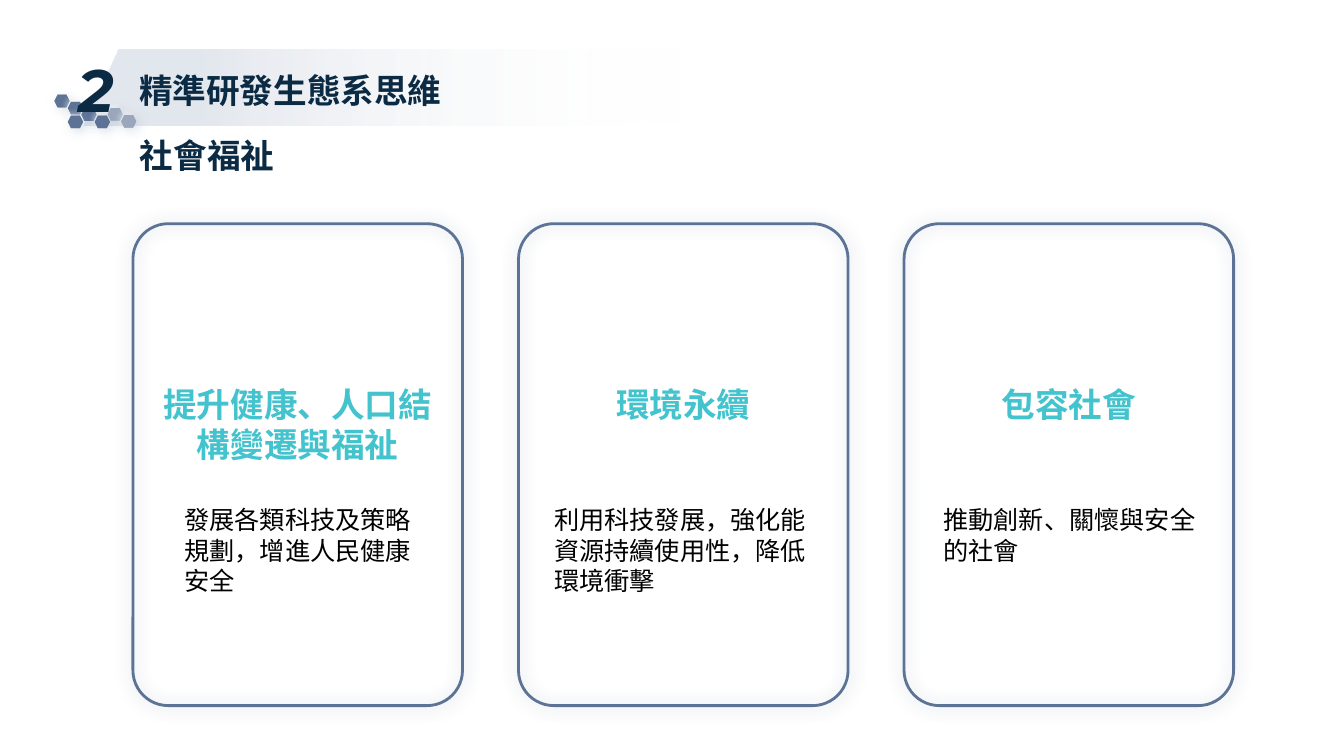
"""Build the social well-being slide: a numbered heading band and three goal cards."""
from lxml import etree
from pptx import Presentation
from pptx.dml.color import RGBColor
from pptx.enum.shapes import MSO_SHAPE
from pptx.enum.text import MSO_ANCHOR, MSO_AUTO_SIZE, PP_ALIGN
from pptx.oxml.ns import qn
from pptx.util import Pt

HEXAGON, ROUNDED = MSO_SHAPE.HEXAGON, MSO_SHAPE.ROUNDED_RECTANGLE
LEFT, CENTER = PP_ALIGN.LEFT, PP_ALIGN.CENTER
TOP, MIDDLE = MSO_ANCHOR.TOP, MSO_ANCHOR.MIDDLE
NO_AUTOFIT = MSO_AUTO_SIZE.NONE
CJK = "Noto Sans CJK SC"
COLORS = {"navy": "0B2A43", "slate": "5C7396", "mist": "99A6BB", "haze": "A2B1C6",
          "teal": "42C3CD", "black": "000000", "white": "FFFFFF"}


def write(shape, text, size, color, bold=False, align=LEFT, anchor=TOP, font=CJK):
    """Fill a shape with one formatted paragraph and return it."""
    frame = shape.text_frame
    frame.word_wrap, frame.auto_size, frame.vertical_anchor = True, NO_AUTOFIT, anchor
    frame.text = text
    paragraph = frame.paragraphs[0]
    paragraph.alignment = align
    paragraph.font.name, paragraph.font.size, paragraph.font.bold = font, Pt(size), bold
    paragraph.font.color.rgb = RGBColor.from_string(COLORS[color])
    latin = paragraph.font._element.find(qn("a:latin"))
    latin.addnext(latin.makeelement(qn("a:ea"), {"typeface": font}))
    return paragraph


def cast_shadow(shape, color, alpha, blur, distance=0, angle=0):
    """Give a shape one soft outer shadow."""
    shape.shadow.inherit = False
    effects = shape._element.spPr.find(qn("a:effectLst"))
    shadow = etree.SubElement(effects, qn("a:outerShdw"), blurRad=str(Pt(blur)),
                              dist=str(Pt(distance)), dir=str(angle * 60000),
                              algn="ctr", rotWithShape="0")
    tint = etree.SubElement(shadow, qn("a:srgbClr"), val=COLORS[color])
    etree.SubElement(tint, qn("a:alpha"), val=str(alpha * 1000))


deck = Presentation()
deck.slide_width, deck.slide_height = Pt(960), Pt(540)
slide = deck.slides.add_slide(deck.slide_layouts[5])
shapes = slide.shapes

outline = shapes.build_freeform(Pt(59.8), Pt(90), scale=1)
outline.add_line_segments([(Pt(85), Pt(35.6)), (Pt(751.4), Pt(35.6)), (Pt(751.4), Pt(90))])
band = outline.convert_to_shape()
band.shadow.inherit = False
band.line.fill.background()
band.fill.gradient()
band.fill.gradient_angle = 180
for stop, (position, color, alpha) in zip(band.fill.gradient_stops,
                                          [(0.38, "white", 0), (0.88, "haze", 30)]):
    stop.position = position
    stop.color.rgb = RGBColor.from_string(COLORS[color])
tints = band._element.spPr.findall(".//" + qn("a:srgbClr"))
for tint, alpha in zip(tints, (0, 30)):
    etree.SubElement(tint, qn("a:alpha"), val=str(alpha * 1000))

HONEYCOMB = [(38.9, 67.7, "slate"), (48.5, 72.7, "slate"), (58.1, 77.4, "slate"),
             (76.9, 77.2, "mist"), (86.5, 82.2, "mist"), (48.5, 82.6, "slate"),
             (67.7, 82.6, "slate")]
for x, y, color in HONEYCOMB:
    for glow, angle in (("haze", 45), ("white", 225)):
        cell = shapes.add_shape(HEXAGON, Pt(x), Pt(y), Pt(10.8), Pt(9))
        cell.fill.solid()
        cell.fill.fore_color.rgb = RGBColor.from_string(COLORS[color])
        cell.line.fill.background()
        cast_shadow(cell, glow, 40, 8 if glow == "haze" else 4, 3, angle)

section = shapes.add_shape(ROUNDED, Pt(34.6), Pt(33.1), Pt(67.7), Pt(60.5))
section.adjustments[0] = 0.113
section.shadow.inherit = False
section.fill.background()
section.line.fill.background()
section.text_frame.margin_left = section.text_frame.margin_right = 0
section.text_frame.margin_top = section.text_frame.margin_bottom = Pt(5)
numeral = write(section, "2", 42.7, "navy", True, CENTER, MIDDLE, "Montserrat")
numeral.font.italic = True

title = shapes.title
title.left, title.top, title.width, title.height = Pt(92.2), Pt(33.8), Pt(436.3), Pt(46.1)
heading = write(title, "精準研發生態系思維", 24, "navy", True, anchor=MIDDLE)
heading.line_spacing = 1.5
shapes._spTree.append(title._element)

subtitle = shapes.add_textbox(Pt(92.9), Pt(92.9), Pt(317.5), Pt(36))
write(subtitle, "社會福祉", 24, "navy", True)

CARD_LEFT, CARD_PITCH, CARD_WIDTH = 95, 275.4, 235.4
GOALS = [
    ("提升健康、人口結構變遷與福祉", 211.7, "發展各類科技及策略規劃，增進人民健康安全", 124.6, 183.6),
    ("環境永續", 210.2, "利用科技發展，強化能資源持續使用性，降低環境衝擊", 388.8, 204.5),
    ("包容社會", 185, "推動創新、關懷與安全的社會", 666.7, 204.5),
]
for index, (goal, goal_width, detail, detail_left, detail_width) in enumerate(GOALS):
    left = CARD_LEFT + index * CARD_PITCH
    card = shapes.add_shape(ROUNDED, Pt(left), Pt(159.8), Pt(CARD_WIDTH), Pt(344.2))
    card.adjustments[0] = 0.107
    card.fill.background()
    card.line.color.rgb = RGBColor.from_string(COLORS["slate"])
    card.line.width = Pt(2)
    cast_shadow(card, "slate", 37, 12)
    goal_left = left + (CARD_WIDTH - goal_width) / 2
    goal_box = shapes.add_textbox(Pt(goal_left), Pt(270.7), Pt(goal_width), Pt(65.5))
    write(goal_box, goal, 24, "teal", True, CENTER)
    detail_box = shapes.add_textbox(Pt(detail_left), Pt(357), Pt(detail_width), Pt(72.7))
    write(detail_box, detail, 18, "black")

deck.save("out.pptx")
